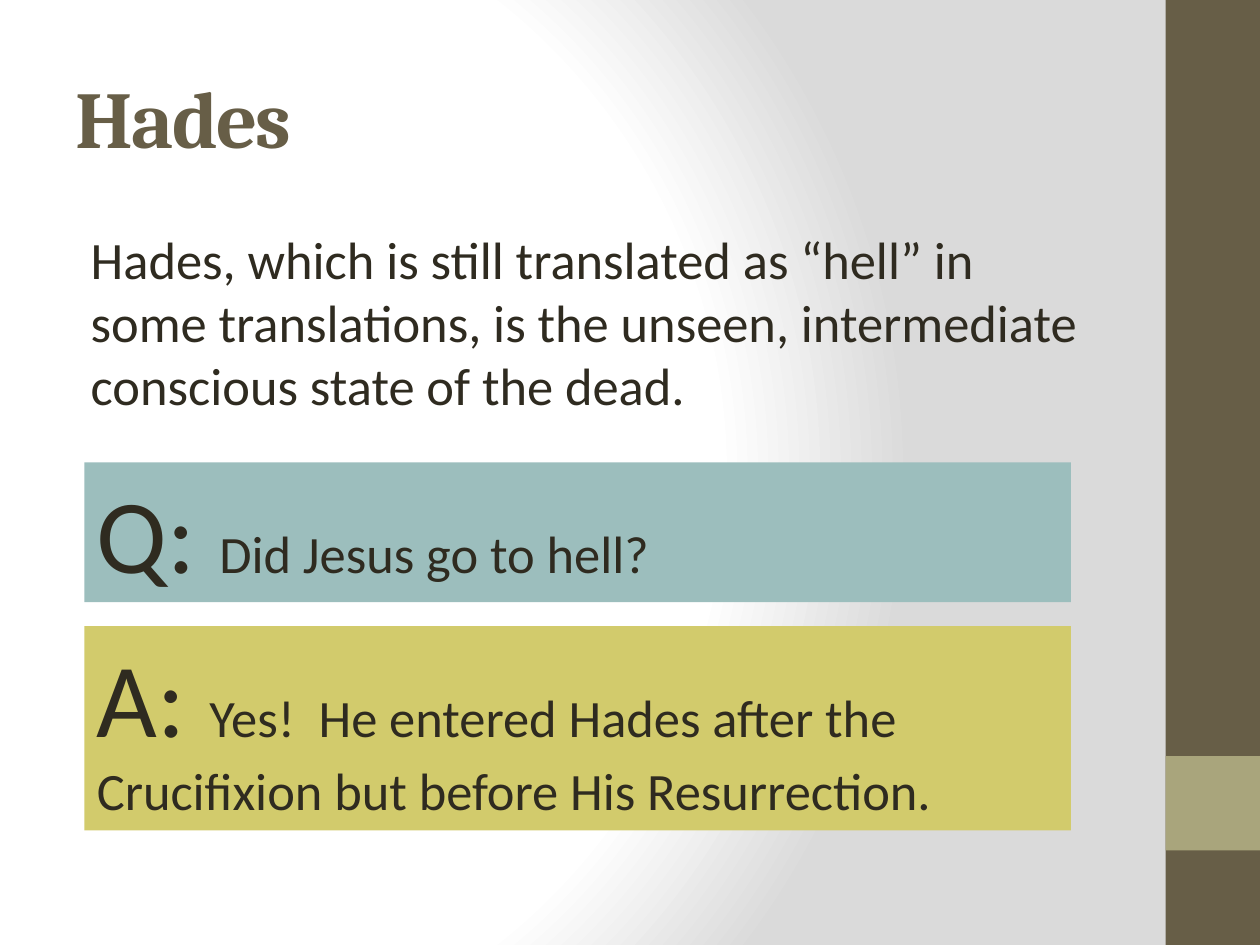
from pptx import Presentation
from pptx.dml.color import RGBColor
from pptx.enum.shapes import MSO_SHAPE
from pptx.enum.text import MSO_ANCHOR as Anchor, MSO_AUTO_SIZE as AutoSize, PP_ALIGN as Align
from pptx.oxml import parse_xml
from pptx.oxml.ns import qn
from pptx.util import Inches, Pt

BROWN, KHAKI, TEAL, YELLOW, INK = "675E47", "A9A57C", "9CBEBD", "D2CB6C", "2F2B20"


def add_block(left, top, width, height, color):
    shape = slide.shapes.add_shape(
        MSO_SHAPE.RECTANGLE, Inches(left), Inches(top), Inches(width), Inches(height))
    shape.shadow.inherit = False
    shape.fill.solid()
    shape.fill.fore_color.rgb = RGBColor.from_string(color)
    shape.line.fill.background()
    return shape


def add_run(paragraph, text, size, color=INK, font="Calibri"):
    run = paragraph.add_run()
    run.text = text
    run.font.size = Pt(size)
    run.font.name = font
    run.font.color.rgb = RGBColor.from_string(color)
    return run


presentation = Presentation()
presentation.slide_width, presentation.slide_height = Inches(10), Inches(7.5)
slide = presentation.slides.add_slide(presentation.slide_layouts[1])

# Background: radial gradient from white to light grey
stops = "".join(
    f'<a:gs pos="{position * 1000}"><a:srgbClr val="{color}"/></a:gs>'
    for position, color in [(0, "FFFFFF"), (75, "FFFFFF"), (100, "DADADA")])
gradient = parse_xml(
    '<a:gradFill xmlns:a="http://schemas.openxmlformats.org/drawingml/2006/main" rotWithShape="1">'
    f'<a:gsLst>{stops}</a:gsLst><a:path path="circle">'
    '<a:fillToRect l="20000" t="50000" r="100000" b="50000"/></a:path></a:gradFill>')
slide.background.fill.solid()
solid = next(slide.element.iter(qn("a:solidFill")))
solid.getparent().replace(solid, gradient)

# Side band
add_block(9.25, 0, 0.75, 7.5, BROWN)
add_block(9.25, 6, 0.75, 0.75, KHAKI)

# Title and definition
title, body = slide.placeholders
for placeholder, top, height in [(title, 0.3, 1.25), (body, 1.75, 1.75)]:
    placeholder.left, placeholder.top = Inches(0.5), Inches(top)
    placeholder.width, placeholder.height = Inches(8.33), Inches(height)
    placeholder.text_frame.auto_size = AutoSize.NONE
    placeholder.text_frame.paragraphs[0].alignment = Align.LEFT

title.text_frame.vertical_anchor = Anchor.MIDDLE
heading = add_run(title.text_frame.paragraphs[0], "Hades", 46, BROWN, "Cambria")
heading.font.bold = True
heading.font._element.set("spc", "-100")

definition = body.text_frame.paragraphs[0]
properties = definition._p.get_or_add_pPr()
properties.set("marL", str(Inches(0.12)))
properties.set("indent", "0")
properties.append(properties.makeelement(qn("a:buNone"), {}))
add_run(definition, "Hades, which is still translated as “hell” in some translations, "
        "is the unseen, intermediate conscious state of the dead.", 30)

# Question and answer
for top, height, color, letter, sentence in [
    (3.67, 1.11, TEAL, "Q:", "  Did Jesus go to hell?"),
    (4.97, 1.62, YELLOW, "A:",
     "  Yes!  He entered Hades after the Crucifixion but before His Resurrection."),
]:
    box = add_block(0.67, top, 7.83, height, color)
    frame = box.text_frame
    frame.word_wrap = True
    frame.auto_size = AutoSize.SHAPE_TO_FIT_TEXT
    frame.vertical_anchor = Anchor.TOP
    paragraph = frame.paragraphs[0]
    paragraph.alignment = Align.LEFT
    add_run(paragraph, letter, 60)
    add_run(paragraph, sentence, 30)

presentation.save("out.pptx")
